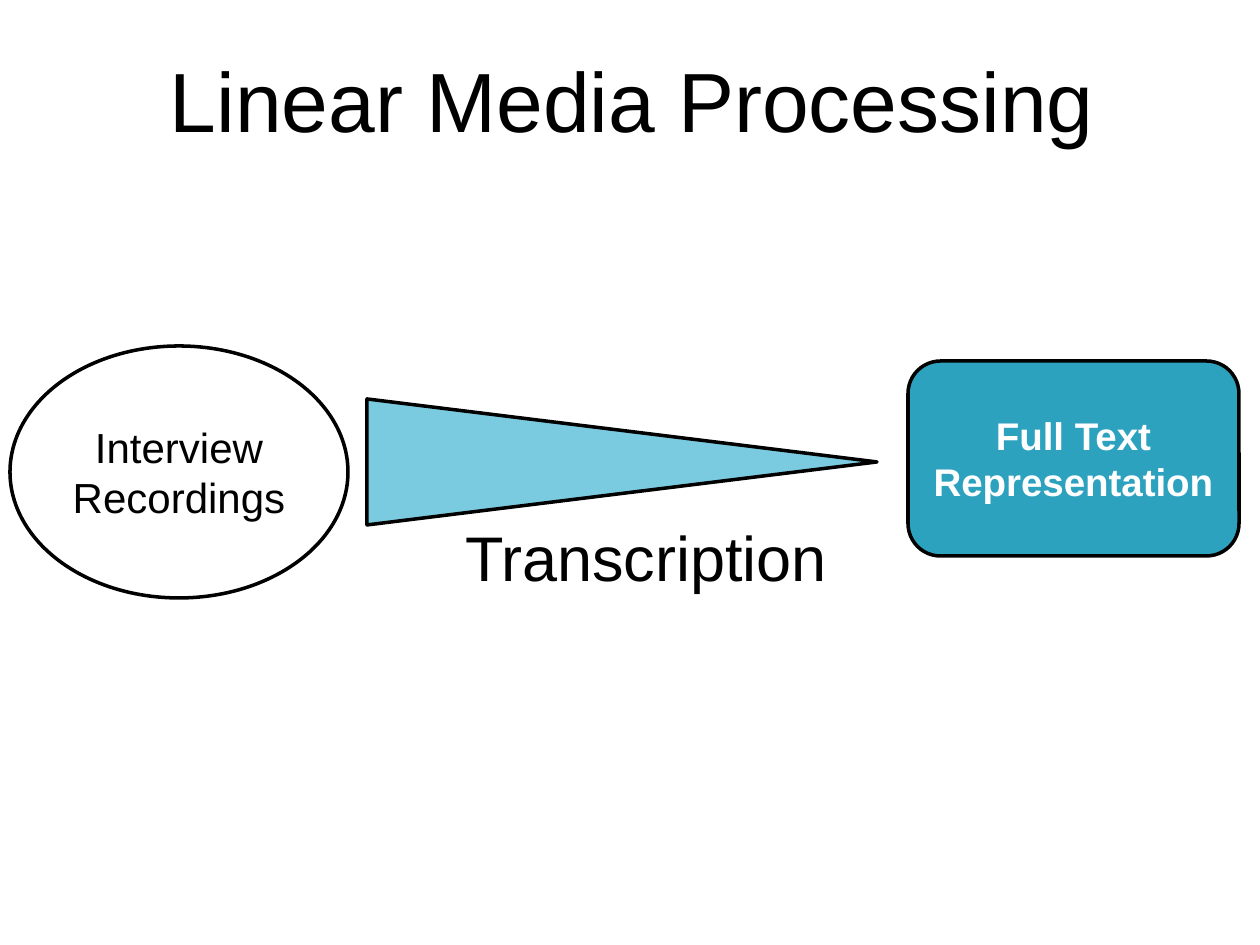
"""Build a slide showing interview recordings transcribed into full text."""
from pptx import Presentation
from pptx.dml.color import RGBColor
from pptx.enum.shapes import MSO_SHAPE
from pptx.enum.text import MSO_ANCHOR, PP_ALIGN

ROUNDED = MSO_SHAPE.ROUNDED_RECTANGLE
OVAL = MSO_SHAPE.OVAL
TRIANGLE = MSO_SHAPE.ISOSCELES_TRIANGLE
TOP, MIDDLE = MSO_ANCHOR.TOP, MSO_ANCHOR.MIDDLE
CENTER = PP_ALIGN.CENTER

PX = 914400 / 126
PT = 12700
FONT = "Arial"
BLACK = RGBColor(0x00, 0x00, 0x00)
WHITE = RGBColor(0xFF, 0xFF, 0xFF)
TEAL = RGBColor(0x2D, 0xA2, 0xBF)
SKY = RGBColor(0x7A, 0xCB, 0xE0)

TITLE = ("Linear Media Processing", (2, 42, 1260, 115), 48)
LABEL = ("Transcription", (415, 512, 462, 89), 36)
SHAPES = [
    (ROUNDED, (908, 361, 331, 195), 0, TEAL, "Full Text Representation", 22, WHITE, True),
    (OVAL, (10, 346, 338, 252), 0, WHITE, "Interview Recordings", 24, BLACK, False),
    (TRIANGLE, (559, 207, 126, 510), 90, SKY, "", 0, BLACK, False),
]


def px(n):
    return round(n * PX)


def write(s, text, size, color=BLACK, bold=False, anchor=TOP):
    tf = s.text_frame
    tf.word_wrap = True
    tf.vertical_anchor = anchor
    tf.margin_left = tf.margin_right = px(9)
    p = tf.paragraphs[0]
    p.alignment = CENTER
    r = p.add_run()
    r.text = text
    r.font.name, r.font.size = FONT, size * PT
    r.font.bold = bold
    r.font.color.rgb = color


def add_shape(slide, kind, box, rotation, fill, text, size, color, bold):
    s = slide.shapes.add_shape(kind, *map(px, box))
    s.rotation = rotation
    s.shadow.inherit = False
    s.fill.solid()
    s.fill.fore_color.rgb = fill
    s.line.color.rgb = BLACK
    s.line.width = 2 * PT
    if text:
        write(s, text, size, color, bold, MIDDLE)


def main():
    prs = Presentation()
    prs.slide_width, prs.slide_height = px(1260), px(945)
    slide = prs.slides.add_slide(prs.slide_layouts[5])
    for shape in SHAPES:
        add_shape(slide, *shape)

    text, box, size = LABEL
    write(slide.shapes.add_textbox(*map(px, box)), text, size)

    text, box, size = TITLE
    title = slide.shapes.title
    title.left, title.top, title.width, title.height = map(px, box)
    write(title, text, size)
    prs.save("out.pptx")


if __name__ == "__main__":
    main()
